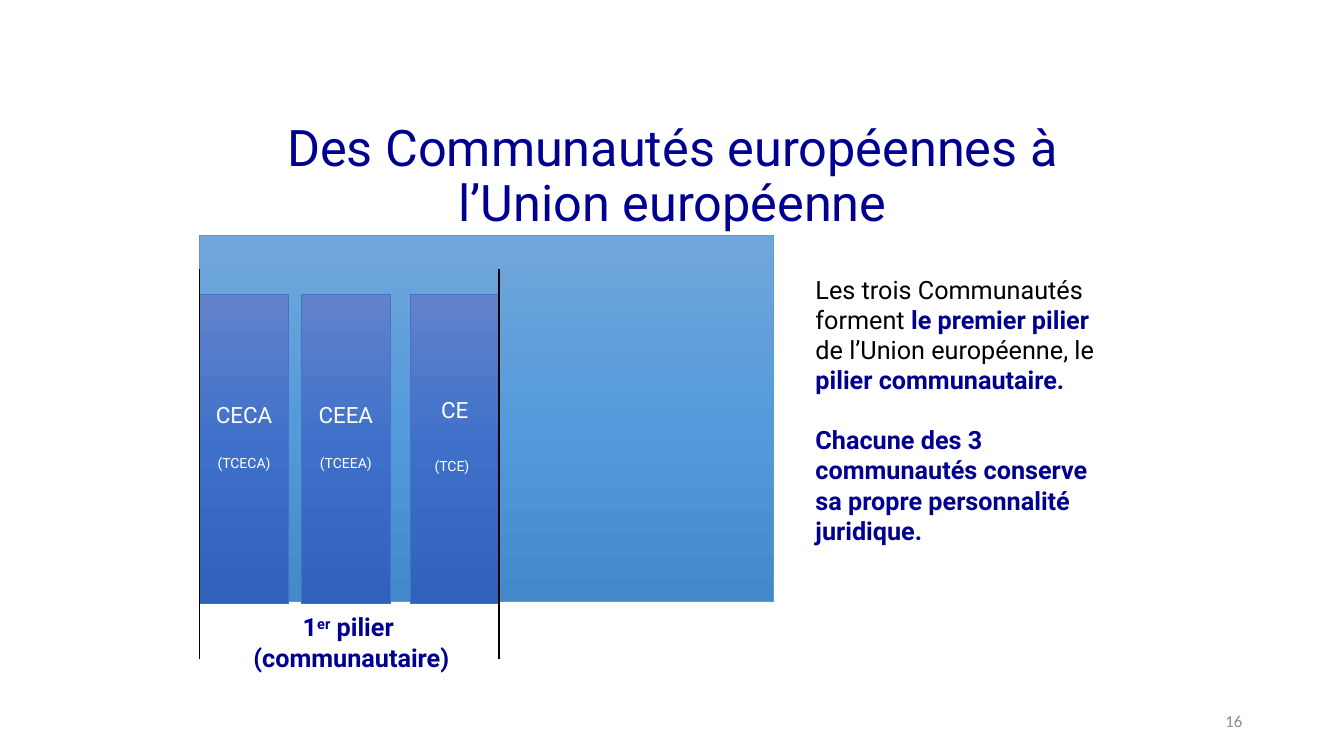
from lxml.etree import SubElement
from pptx import Presentation
from pptx.dml.color import RGBColor
from pptx.enum.shapes import MSO_CONNECTOR, MSO_SHAPE
from pptx.enum.text import MSO_ANCHOR, PP_ALIGN
from pptx.oxml.ns import qn
from pptx.util import Inches, Pt

NAVY = RGBColor(0x00, 0x00, 0x90)
BLACK = RGBColor(0x00, 0x00, 0x00)
WHITE = RGBColor(0xFF, 0xFF, 0xFF)
GRAY = RGBColor(0x8C, 0x8C, 0x8C)
UNION_LINE = RGBColor(0x5B, 0x9B, 0xD5)
PILLAR_LINE = RGBColor(0x44, 0x72, 0xC4)
UNION_GRADIENT = ("71A6DB", "559BDB", "448ACA")
PILLAR_GRADIENT = ("6183CB", "3E70CA", "3062BB")

# Content
TITLE = "Des Communautés européennes à l’Union européenne"
COMMUNITIES = [  # left edge, name, treaty
    (1.98, "CECA", "(TCECA)"),
    (2.99, "CEEA", "(TCEEA)"),
    (4.07, "CE", "(TCE)"),
]
EXPLANATION = [  # text, emphasised
    ("Les trois Communautés forment ", False),
    ("le premier pilier ", True),
    ("de l’Union européenne, le ", False),
    ("pilier communautaire.", True),
]
CONCLUSION = "Chacune des 3 communautés conserve sa propre personnalité juridique."
PAGE_NUMBER = "16"

# Layout
UNION_BOX = (1.98, 2.34, 5.69, 3.63)
PILLAR_TOP, PILLAR_WIDTH, PILLAR_HEIGHT = 2.92, 0.88, 3.07
BRACKET_TOP, BRACKET_BOTTOM = 2.67, 6.54
BRACKET_LEFT = COMMUNITIES[0][0]
BRACKET_RIGHT = COMMUNITIES[-1][0] + PILLAR_WIDTH

presentation = Presentation()
presentation.slide_width, presentation.slide_height = Inches(13.33), Inches(7.5)
slide = presentation.slides.add_slide(presentation.slide_layouts[6])


def add_gradient_box(box, colors, line_color):
    shape = slide.shapes.add_shape(MSO_SHAPE.RECTANGLE, *map(Inches, box))
    shape.shadow.inherit = False
    shape.fill.gradient()
    shape.fill.gradient_angle = 270
    stops = shape._element.spPr.find(qn("a:gradFill")).find(qn("a:gsLst"))
    for stop in list(stops):
        stops.remove(stop)
    for index, color in enumerate(colors):
        stop = SubElement(stops, qn("a:gs"), pos=str(index * 50000))
        SubElement(stop, qn("a:srgbClr"), val=color)
    shape.line.color.rgb = line_color
    shape.line.width = Pt(0.5)
    return shape


def add_text_frame(box, anchor=MSO_ANCHOR.TOP):
    frame = slide.shapes.add_textbox(*map(Inches, box)).text_frame
    frame.word_wrap = True
    frame.vertical_anchor = anchor
    return frame


def write(paragraph, texts, size, color, align=PP_ALIGN.LEFT, bold=None, name="Roboto"):
    paragraph.alignment = align
    font = paragraph.font
    font.name, font.size, font.bold = name, Pt(size), bold
    font.color.rgb = color
    runs = [paragraph.add_run() for _ in texts]
    for run, text in zip(runs, texts):
        run.text = text
    return runs


# Title
title = add_text_frame((2.42, 0.74, 8.5, 1.61), MSO_ANCHOR.BOTTOM).paragraphs[0]
title.line_spacing = 0.9
write(title, [TITLE], 36, NAVY, PP_ALIGN.CENTER)

# Union and its three communities
add_gradient_box(UNION_BOX, UNION_GRADIENT, UNION_LINE)
for left, community, treaty in COMMUNITIES:
    box = (left, PILLAR_TOP, PILLAR_WIDTH, PILLAR_HEIGHT)
    frame = add_gradient_box(box, PILLAR_GRADIENT, PILLAR_LINE).text_frame
    frame.word_wrap = True
    frame.vertical_anchor = MSO_ANCHOR.MIDDLE
    frame.margin_bottom = Inches(0.31)
    write(frame.paragraphs[0], [community], 16, WHITE, PP_ALIGN.CENTER)
    treaty_line = frame.add_paragraph()
    treaty_line.space_before = Pt(18.75)
    write(treaty_line, [treaty], 10, WHITE, PP_ALIGN.CENTER)
    if community == "CE":  # taller treaty line
        space = treaty_line.add_run()
        space.text = " "
        space.font.size = Pt(16)

# Pillar caption
caption = add_text_frame((1.98, 6.02, 3.01, 0.71))
ordinal = write(caption.paragraphs[0], ["1", "er", " pilier "], 18, NAVY, PP_ALIGN.CENTER, True)
ordinal[1]._r.get_or_add_rPr().set("baseline", "30000")
write(caption.add_paragraph(), ["(communautaire)"], 18, NAVY, PP_ALIGN.CENTER, True)

# Explanation
explanation = add_text_frame((7.99, 2.67, 3.1, 3.13))
runs = write(explanation.paragraphs[0], [text for text, _ in EXPLANATION], 18, BLACK)
for run, (_, emphasised) in zip(runs, EXPLANATION):
    if emphasised:
        run.font.bold = True
        run.font.color.rgb = NAVY
conclusion = explanation.add_paragraph()
conclusion.space_before = Pt(21)
write(conclusion, [CONCLUSION], 18, NAVY, bold=True)

# Lines bounding the first pillar
for x in (BRACKET_LEFT, BRACKET_RIGHT):
    line = slide.shapes.add_connector(
        MSO_CONNECTOR.STRAIGHT, Inches(x), Inches(BRACKET_TOP), Inches(x), Inches(BRACKET_BOTTOM))
    line.line.color.rgb = BLACK
    line.line.width = Pt(1)
    SubElement(line._element.spPr, qn("a:effectLst"))

# Page number
page = add_text_frame((9.42, 6.95, 3, 0.4), MSO_ANCHOR.MIDDLE)
write(page.paragraphs[0], [PAGE_NUMBER], 12, GRAY, PP_ALIGN.RIGHT, name="Calibri")

presentation.save("out.pptx")
